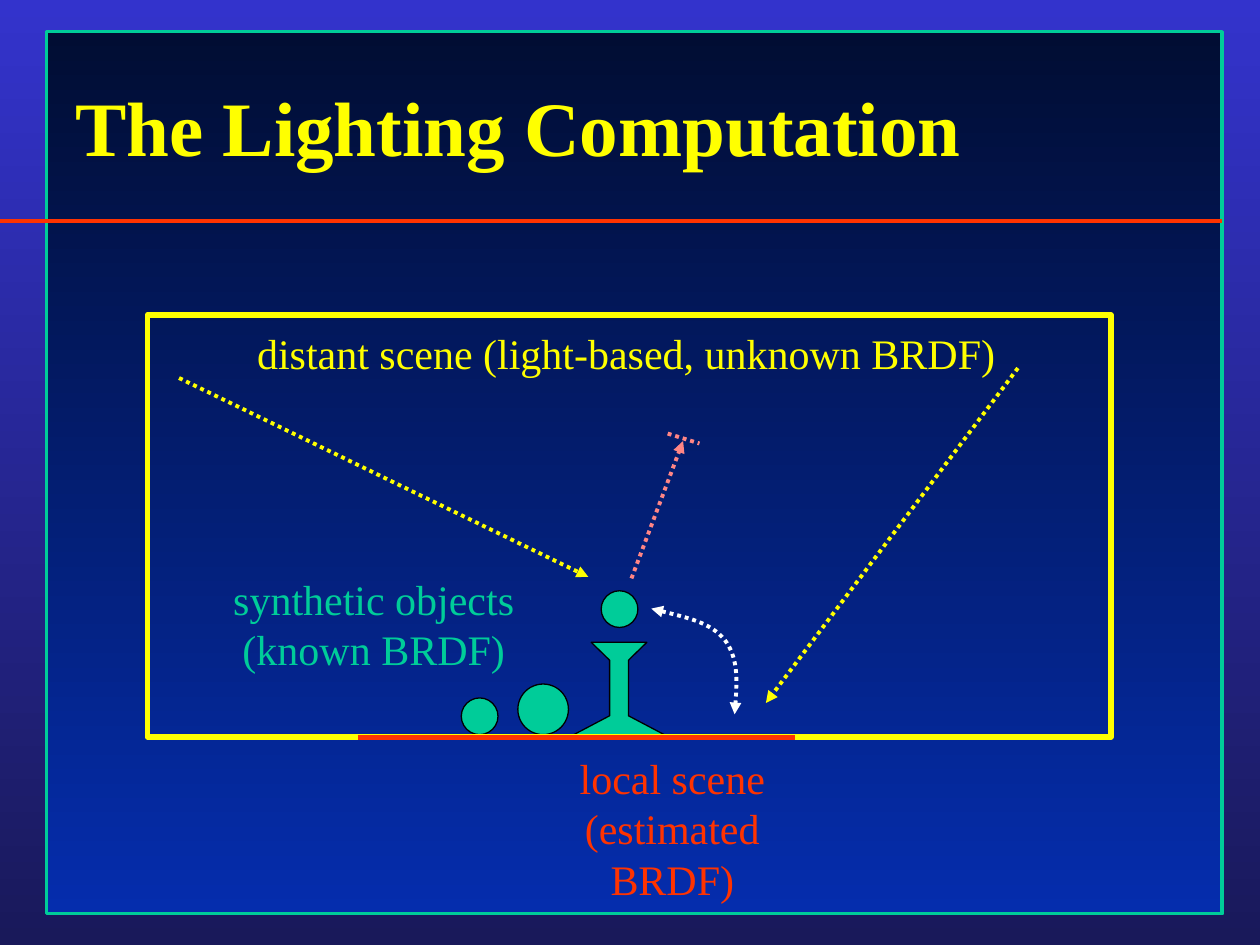
from lxml.etree import SubElement
from pptx import Presentation
from pptx.dml.color import RGBColor
from pptx.enum.dml import MSO_LINE
from pptx.enum.shapes import MSO_CONNECTOR, MSO_SHAPE
from pptx.enum.text import MSO_ANCHOR, PP_ALIGN
from pptx.oxml.ns import qn
from pptx.util import Cm, Pt

YELLOW = RGBColor(0xFF, 0xFF, 0x00)
GREEN = RGBColor(0x00, 0xCC, 0x99)
RED = RGBColor(0xFF, 0x33, 0x00)
PINK = RGBColor(0xFF, 0x85, 0x85)
WHITE = RGBColor(0xFF, 0xFF, 0xFF)
BLACK = RGBColor(0x00, 0x00, 0x00)
BACKGROUND = RGBColor(0x33, 0x33, 0xCC), RGBColor(0x19, 0x19, 0x5A)
PANEL = RGBColor(0x01, 0x0D, 0x33), RGBColor(0x05, 0x2D, 0xAD)
FONT = "Times New Roman"

# All positions are in centimetres.
FRAME = (0.94, 0.64, 23.7, 17.78)
ROOM = (2.97, 6.35, 19.43, 8.51)
FLOOR = ROOM[1] + ROOM[3]
TITLE = ("The Lighting Computation", (1.27, 0.84, 20.32, 3.38))
LABELS = [
    ("synthetic objects\n(known BRDF)", (4.45, 11.43, 6.17, 2.29), GREEN),
    ("distant scene (light-based, unknown BRDF)", (4.93, 6.48, 15.39, 1.27), YELLOW),
    ("local scene\n(estimated BRDF)", (10.19, 15.04, 6.73, 2.29), RED),
]
BALLS = [(9.3, 14.07, 0.74), (10.44, 13.79, 1.02), (12.12, 11.91, 0.74)]
PEDESTAL_AXIS = 12.48
PEDESTAL_PROFILE = [(0.56, 12.95), (0.19, 13.31), (0.19, 14.43), (0.93, 14.82)]
RAYS = [  # start, end, colour, has arrowhead
    ((3.61, 7.62), (11.86, 11.63), YELLOW, True),
    ((20.52, 7.42), (15.44, 14.17), YELLOW, True),
    ((12.73, 11.66), (13.77, 8.89), PINK, True),
    ((13.46, 8.74), (14.1, 8.94), PINK, False),
]
# Start point, then two control points and an end point for each curve
BOUNCE = [(13.13, 12.27), (13.72, 12.42), (14.33, 12.55), (14.61, 12.9),
          (14.88, 13.26), (14.86, 13.82), (14.81, 14.4)]


def cm(values):
    return [Cm(v) for v in values]


def set_gradient(fill, colors):
    fill.gradient()
    fill.gradient_angle = 270
    for stop, position, color in zip(fill.gradient_stops, (0, 1), colors):
        stop.position = position
        stop.color.rgb = color


def set_line(s, color, width, dotted=False, ends=()):
    s.line.color.rgb = color
    s.line.width = Pt(width)
    if dotted:
        s.line.dash_style = MSO_LINE.ROUND_DOT
    for end in ends:
        SubElement(s.line._get_or_add_ln(), qn(f"a:{end}"), type="triangle")


def add_rect(box):
    s = shapes.add_shape(MSO_SHAPE.RECTANGLE, *cm(box))
    s.shadow.inherit = False
    s.fill.background()
    return s


def add_line(start, end, color, width, **style):
    s = shapes.add_connector(MSO_CONNECTOR.STRAIGHT, *cm(start + end))
    SubElement(s._element.spPr, qn("a:effectLst"))
    set_line(s, color, width, **style)


def add_outline(points, close):
    builder = shapes.build_freeform(*cm(points[0]))
    builder.add_line_segments([cm(p) for p in points[1:]], close=close)
    s = builder.convert_to_shape()
    s.shadow.inherit = False
    return s


def add_green(s):
    """Give a synthetic object its fill and thin outline."""
    s.shadow.inherit = False
    s.fill.solid()
    s.fill.fore_color.rgb = GREEN
    set_line(s, BLACK, 0.75)


def bend(s):
    """Turn each three line segments of a freeform into one Bezier curve."""
    path = s._element.find(".//" + qn("a:path"))
    segments = path.findall(qn("a:lnTo"))
    for i in range(0, len(segments), 3):
        curve = SubElement(path, qn("a:cubicBezTo"))
        for segment in segments[i:i + 3]:
            curve.append(segment[0])
            path.remove(segment)


def add_text(text, box, color, size, bold=False, align=PP_ALIGN.CENTER,
             anchor=MSO_ANCHOR.TOP, wrap=False):
    tf = shapes.add_textbox(*cm(box)).text_frame
    tf.word_wrap = wrap
    tf.vertical_anchor = anchor
    tf.text = text
    for p in tf.paragraphs:
        p.alignment = align
        for r in p.runs:
            r.font.size = Pt(size)
            r.font.bold = bold
            r.font.color.rgb = color
            effects = SubElement(r._r.get_or_add_rPr(), qn("a:effectLst"))
            shadow = SubElement(effects, qn("a:outerShdw"), dist="38100",
                                dir="2700000", algn="tl")
            SubElement(shadow, qn("a:srgbClr"), val=str(BLACK))
            r.font.name = FONT


prs = Presentation()
prs.slide_width, prs.slide_height = Cm(25.4), Cm(19.05)
slide = prs.slides.add_slide(prs.slide_layouts[6])
shapes = slide.shapes
set_gradient(slide.background.fill, BACKGROUND)

panel = add_rect(FRAME)
set_gradient(panel.fill, PANEL)
set_line(panel, GREEN, 2)
add_line((0, 4.45), (FRAME[0] + FRAME[2], 4.45), RED, 2)
add_text(*TITLE, YELLOW, 44, bold=True, align=PP_ALIGN.LEFT,
         anchor=MSO_ANCHOR.MIDDLE, wrap=True)

for left, top, size in BALLS:
    add_green(shapes.add_shape(MSO_SHAPE.OVAL, *cm((left, top, size, size))))
right_side = [(PEDESTAL_AXIS + half, y) for half, y in PEDESTAL_PROFILE]
left_side = [(PEDESTAL_AXIS - half, y) for half, y in reversed(PEDESTAL_PROFILE)]
add_green(add_outline(right_side + left_side, close=True))

set_line(add_rect(ROOM), YELLOW, 3)
for text, box, color in LABELS:
    add_text(text, box, color, 24)
add_line((7.21, FLOOR), (16.03, FLOOR), RED, 3)

for start, end, color, arrow in RAYS:
    add_line(start, end, color, 2.25, dotted=True, ends=["tailEnd"] if arrow else [])
bounce = add_outline(BOUNCE, close=False)
bend(bounce)
bounce.fill.background()
set_line(bounce, WHITE, 2.25, dotted=True, ends=["headEnd", "tailEnd"])

prs.save("out.pptx")
